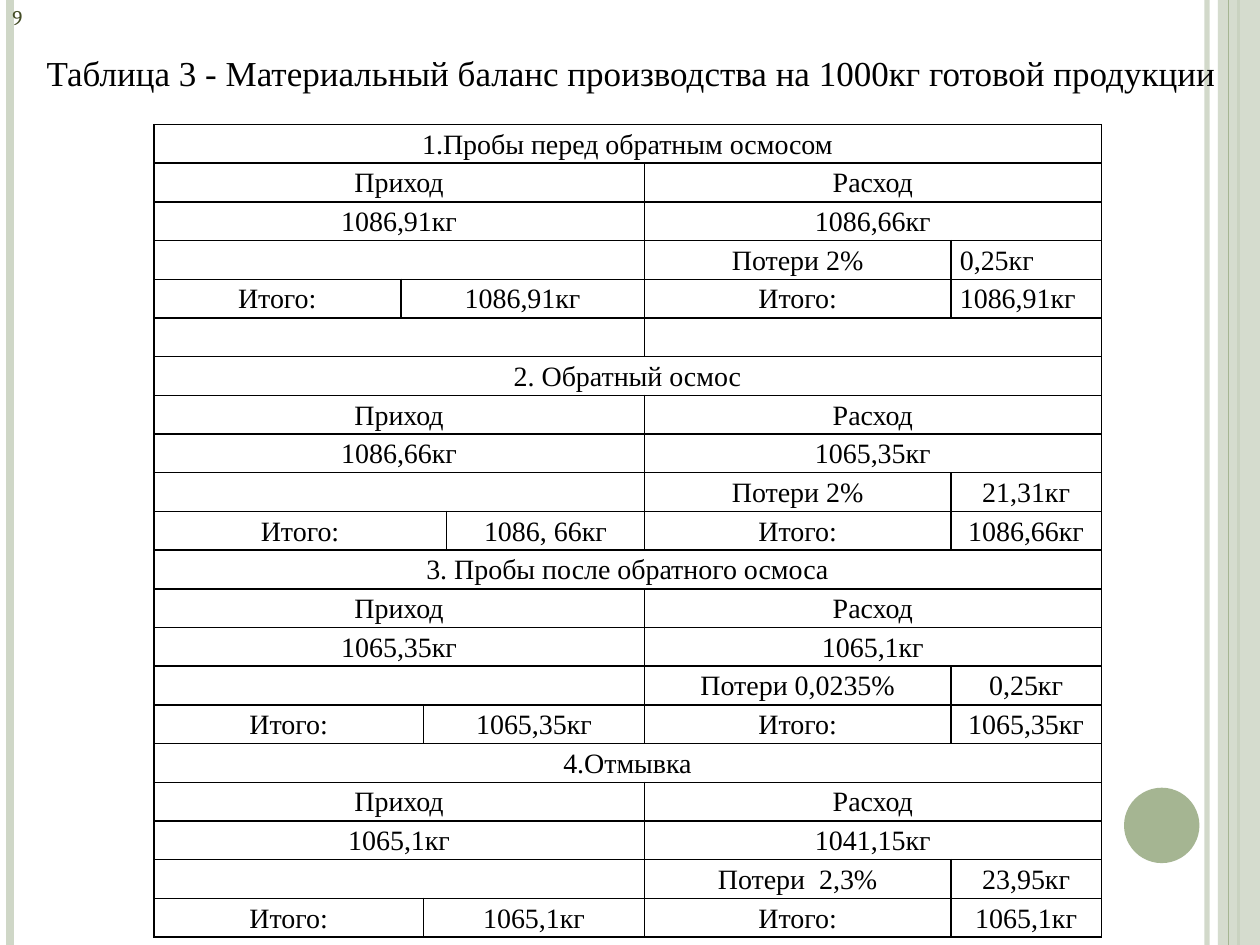
from dataclasses import dataclass
from lxml import etree
from pptx import Presentation
from pptx import util as u
from pptx.dml.color import RGBColor
from pptx.enum import shapes, text
from pptx.oxml.ns import qn


@dataclass(frozen=True)
class Theme:
    pale: str = "CFD7C7"
    green: str = "A5B592"
    olive: str = "444D26"
    black: str = "000000"
    serif: str = "Times New Roman"
    number_font: str = "Cambria"
    title_size: int = 20
    table_size: int = 16
    number_size: int = 12
    border: float = 1


class SlideBuilder:
    def __init__(self, s, theme):
        self.s = s
        self.theme = theme

    def set_alpha(self, fill_parent, percent):
        color = fill_parent.find(".//" + qn("a:srgbClr"))
        etree.SubElement(color, qn("a:alpha"), val=str(percent * 1000))

    def format_runs(self, p, font, size, color):
        for r in p.runs:
            r.font.name = font
            r.font.size = u.Pt(size)
            r.font.color.rgb = RGBColor.from_string(color)

    def vertical_line(self, x, color, width, alpha=None):
        line = self.s.shapes.add_connector(
            shapes.MSO_CONNECTOR.STRAIGHT, u.Cm(x), 0, u.Cm(x), u.Cm(19.05))
        line.line.color.rgb = RGBColor.from_string(color)
        line.line.width = u.Pt(width)
        spPr = line._element.spPr
        if alpha:
            self.set_alpha(spPr, alpha)
        etree.SubElement(spPr, qn("a:effectLst"))

    def shape(self, kind, x, y, w, h, color, alpha=None):
        sp = self.s.shapes.add_shape(kind, u.Cm(x), u.Cm(y), u.Cm(w), u.Cm(h))
        sp.shadow.inherit = False
        sp.fill.solid()
        sp.fill.fore_color.rgb = RGBColor.from_string(color)
        sp.line.fill.background()
        if alpha:
            self.set_alpha(sp._element.spPr, alpha)

    def text_box(self, content, x, y, w, h, font, size, color,
                 anchor=text.MSO_ANCHOR.TOP):
        sp = self.s.shapes.add_textbox(u.Cm(x), u.Cm(y), u.Cm(w), u.Cm(h))
        tf = sp.text_frame
        tf.word_wrap = True
        tf.vertical_anchor = anchor
        tf.text = content
        self.format_runs(tf.paragraphs[0], font, size, color)

    def cell_style(self, cell):
        cell.margin_left = cell.margin_right = u.Cm(0.18)
        cell.margin_top = cell.margin_bottom = 0
        tcPr = cell._tc.get_or_add_tcPr()
        for side in ("lnL", "lnR", "lnT", "lnB"):
            ln = etree.SubElement(tcPr, qn("a:" + side),
                                  w=str(u.Pt(self.theme.border)))
            fill = etree.SubElement(ln, qn("a:solidFill"))
            etree.SubElement(fill, qn("a:srgbClr"), val=self.theme.black)
        cell.fill.background()

    def cell_text(self, cell, content, align):
        th = self.theme
        p = cell.text_frame.paragraphs[0]
        if content:
            p.text = content
            p.alignment = align
            p.line_spacing = 1.15
            self.format_runs(p, th.serif, th.table_size, th.black)
        else:
            etree.SubElement(p._p, qn("a:endParaRPr"),
                             sz=str(th.table_size * 100))

    def table(self, rows, x, y, widths, row_height):
        frame = self.s.shapes.add_table(
            len(rows), len(widths), u.Cm(x), u.Cm(y),
            u.Cm(sum(widths)), u.Cm(row_height * len(rows)))
        table = frame.table
        table.first_row = table.horz_banding = False
        for column, width in zip(table.columns, widths):
            column.width = u.Cm(width)
        for row in table.rows:
            row.height = u.Cm(row_height)
        for cell in table.iter_cells():
            self.cell_style(cell)
        for i, row in enumerate(rows):
            j = 0
            for content, span, align in row:
                cell = table.cell(i, j)
                if span > 1:
                    cell.merge(table.cell(i, j + span - 1))
                self.cell_text(cell, content, align)
                j += span


CENTER, LEFT = text.PP_ALIGN.CENTER, text.PP_ALIGN.LEFT

STAGES = [
    ("1.Пробы перед обратным осмосом", "1086,91кг", "1086,66кг",
     "Потери 2%", "0,25кг", "1086,91кг", 1, LEFT),
    ("2. Обратный осмос", "1086,66кг", "1065,35кг",
     "Потери 2%", "21,31кг", "1086, 66кг", 3, CENTER),
    ("3. Пробы после обратного осмоса", "1065,35кг", "1065,1кг",
     "Потери 0,0235%", "0,25кг", "1065,35кг", 2, CENTER),
    ("4.Отмывка", "1065,1кг", "1041,15кг",
     "Потери  2,3%", "23,95кг", "1065,1кг", 2, CENTER),
]


def halves(left, right):
    return [(left, 4, CENTER), (right, 2, CENTER)]


def stage_rows(title, income, outcome, loss_label, loss, total, split, align):
    return [
        [(title, 6, CENTER)],
        halves("Приход", "Расход"),
        halves(income, outcome),
        [("", 4, CENTER), (loss_label, 1, CENTER), (loss, 1, align)],
        [("Итого:", split, CENTER), (total, 4 - split, CENTER),
         ("Итого:", 1, CENTER), (income, 1, align)],
    ]


def main():
    prs = Presentation()
    prs.slide_width, prs.slide_height = u.Cm(25.4), u.Cm(19.05)
    th = Theme()
    b = SlideBuilder(prs.slides.add_slide(prs.slide_layouts[6]), th)

    b.vertical_line(24.33, th.pale, 3, alpha=93)
    b.vertical_line(0.21, th.pale, 4.5)
    b.vertical_line(24.97, th.green, 1.5)
    b.shape(shapes.MSO_SHAPE.RECTANGLE, 24.55, 0, 0.85, 19.05, th.pale, alpha=87)
    b.vertical_line(24.77, th.green, 0.75)
    b.shape(shapes.MSO_SHAPE.OVAL, 22.66, 15.88, 1.52, 1.52, th.green)

    b.text_box("9", 0, 0, 1.7, 0.71, th.number_font, th.number_size, th.olive,
               text.MSO_ANCHOR.MIDDLE)
    b.text_box("Таблица 3 - Материальный баланс производства на 1000кг "
               "готовой продукции", 0.69, 0.91, 24.2, 1.12,
               th.serif, th.title_size, th.black)

    rows = [row for stage in STAGES for row in stage_rows(*stage)]
    rows.insert(5, halves("", ""))
    b.table(rows, 3.1, 2.51, [4.98, 0.41, 0.41, 3.99, 6.18, 3.03], 0.78)
    prs.save("out.pptx")


if __name__ == "__main__":
    main()
